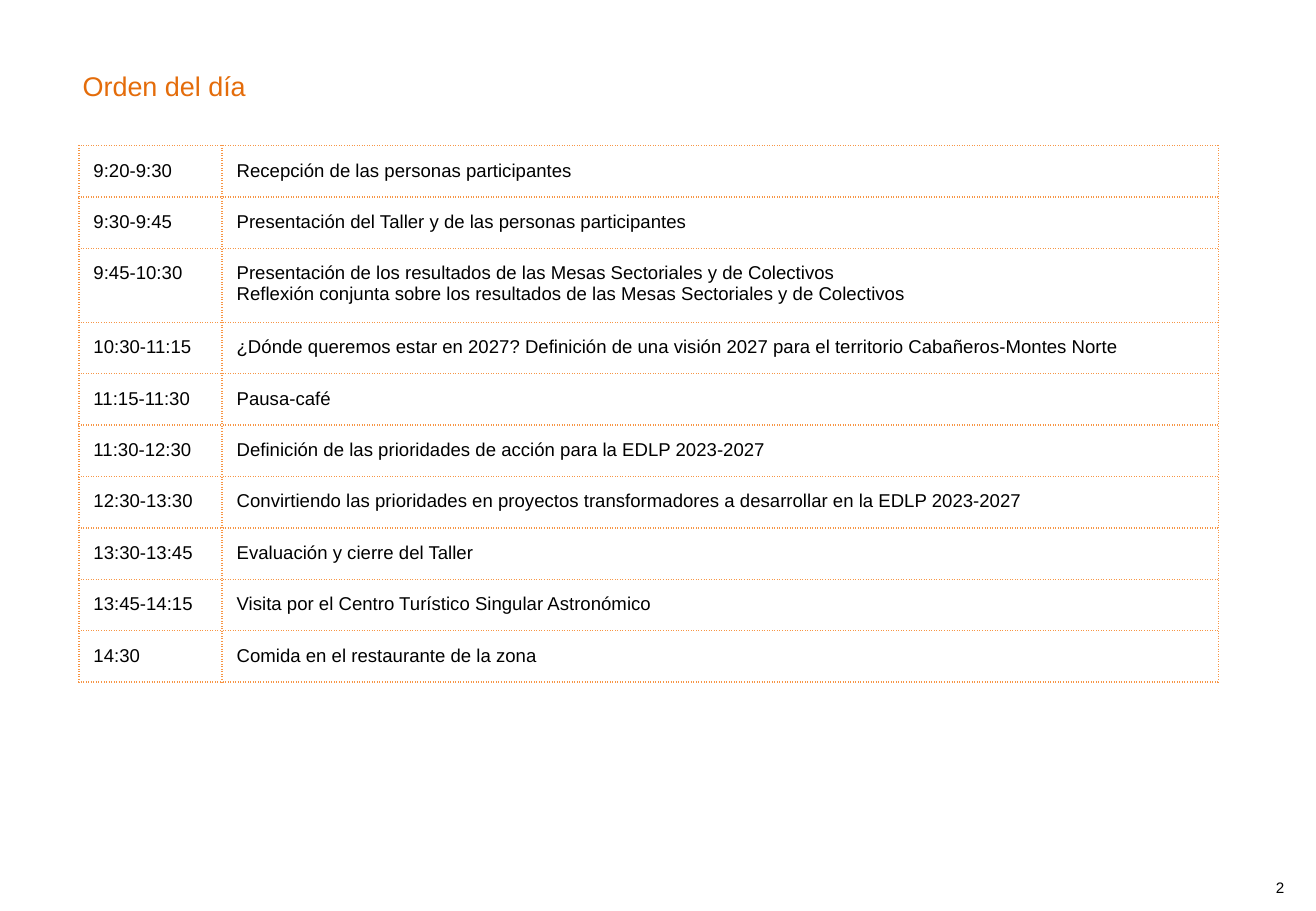
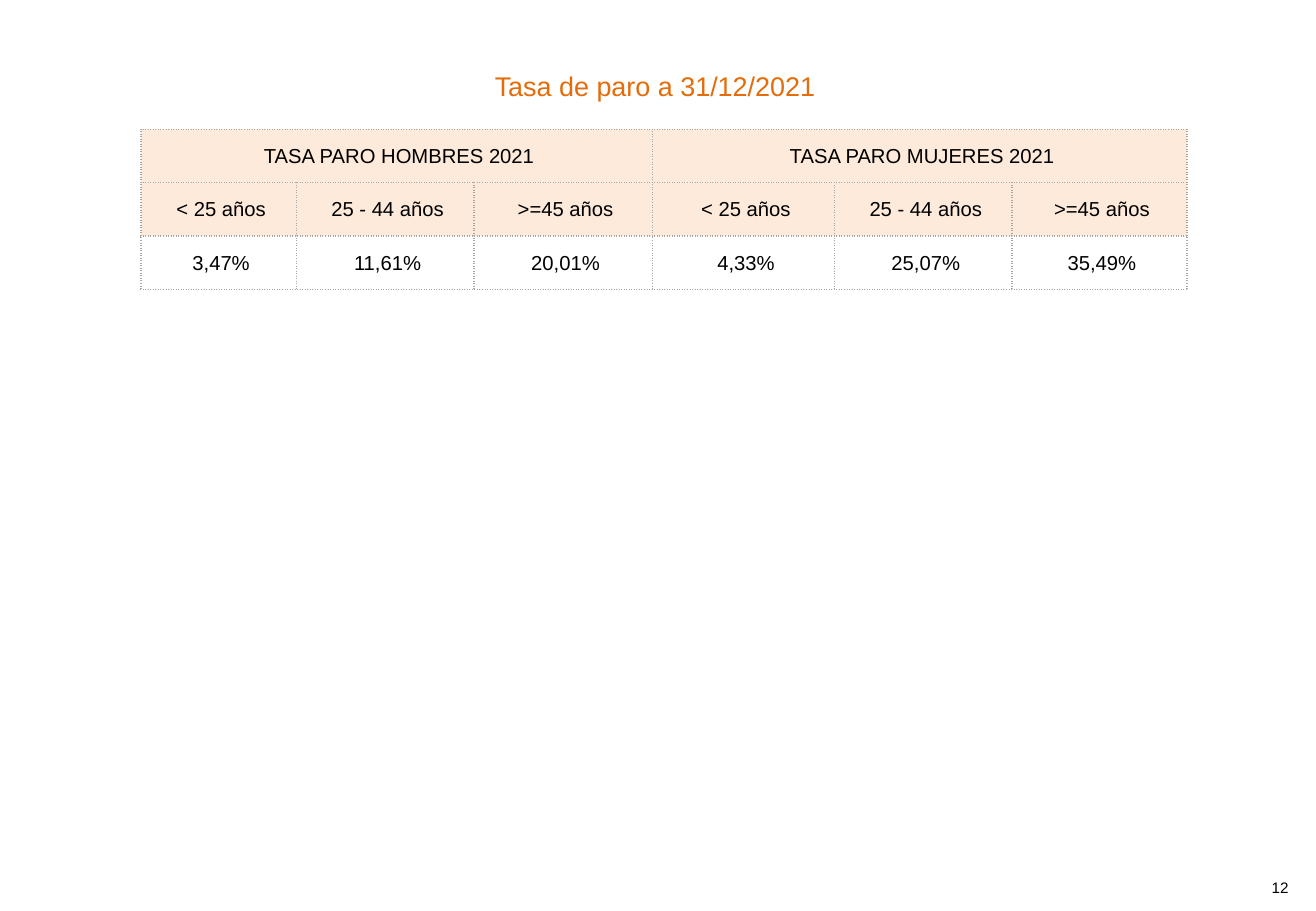
from lxml import etree
from pptx import Presentation
from pptx.dml.color import RGBColor
from pptx.enum.text import MSO_ANCHOR, MSO_AUTO_SIZE, PP_ALIGN
from pptx.oxml.ns import qn
from pptx.util import Inches, Pt

LEFT, CENTER, JUSTIFY = PP_ALIGN.LEFT, PP_ALIGN.CENTER, PP_ALIGN.JUSTIFY
TOP, MIDDLE = MSO_ANCHOR.TOP, MSO_ANCHOR.MIDDLE
FIT_SHAPE = MSO_AUTO_SIZE.SHAPE_TO_FIT_TEXT

SLIDE_W, SLIDE_H = Inches(10.83), Inches(7.5)
FONT = "Arial"
BLACK, WHITE, TITLE_ORANGE = "000000", "FFFFFF", "E46C0A"
LINE_ORANGE, LINE_GREY, PEACH = "F79646", "A6A6A6", "FDEADA"

TITLE_BOX = (5.36, 7.0, 88.83, 4.93)
NUMBER_BOX = (95.11, 96.13, 4.34, 2.53)
AGENDA_BOX = (6, 16, 86.61, 57.9)
RATES_BOX = (10.71, 14.2, 79.5, 17.47)

AGENDA = [
    ("9:20-9:30", "Recepción de las personas participantes"),
    ("9:30-9:45", "Presentación del Taller y de las personas participantes"),
    ("9:45-10:30", "Presentación de los resultados de las Mesas Sectoriales y de Colectivos\n"
     "Reflexión conjunta sobre los resultados de las Mesas Sectoriales y de Colectivos"),
    ("10:30-11:15", "¿Dónde queremos estar en 2027? Definición de una visión 2027 "
     "para el territorio Cabañeros-Montes Norte"),
    ("11:15-11:30", "Pausa-café"),
    ("11:30-12:30", "Definición de las prioridades de acción para la EDLP 2023-2027"),
    ("12:30-13:30", "Convirtiendo las prioridades en proyectos transformadores "
     "a desarrollar en la EDLP 2023-2027"),
    ("13:30-13:45", "Evaluación y cierre del Taller"),
    ("13:45-14:15", "Visita por el Centro Turístico Singular Astronómico"),
    ("14:30", "Comida en el restaurante de la zona"),
]
AGES = ("< 25 años", "25 - 44 años", ">=45 años")
RATES = [
    ("TASA PARO HOMBRES 2021", "", "", "TASA PARO MUJERES 2021", "", ""),
    AGES * 2,
    ("3,47%", "11,61%", "20,01%", "4,33%", "25,07%", "35,49%"),
]


def rgb(value):
    """Turn a hex string into a colour."""
    return RGBColor.from_string(value)


def place(box):
    """Convert left, top, width and height in percent of the slide to lengths."""
    sides = (SLIDE_W, SLIDE_H, SLIDE_W, SLIDE_H)
    return [int(side * share / 100) for side, share in zip(sides, box)]


def write(frame, text, size, color, align):
    """Write text into a frame in one uniform style."""
    frame.text = text
    for paragraph in frame.paragraphs:
        paragraph.alignment = align
        for run in paragraph.runs:
            run.font.name, run.font.size = FONT, Pt(size)
            run.font.color.rgb = rgb(color)


def set_borders(cell, color, dash):
    """Draw a dotted line of one point on all four sides of a cell."""
    properties = cell._tc.get_or_add_tcPr()
    for index, side in enumerate(("lnL", "lnR", "lnT", "lnB")):
        line = etree.Element(qn("a:" + side), w=str(Pt(1)))
        fill = etree.SubElement(line, qn("a:solidFill"))
        etree.SubElement(fill, qn("a:srgbClr"), val=color)
        etree.SubElement(line, qn("a:prstDash"), val=dash)
        properties.insert(index, line)


def add_grid(slide, box, texts, col_weights, row_weights, size, align, anchor,
             right_inset, line, header_rows=0):
    """Add a dotted table whose columns and rows share the box by weight."""
    left, top, width, height = place(box)
    table = slide.shapes.add_table(len(texts), len(col_weights),
                                   left, top, width, height).table
    table.first_row = table.horz_banding = False
    for column, weight in zip(table.columns, col_weights):
        column.width = int(width * weight / sum(col_weights))
    for row, weight in zip(table.rows, row_weights):
        row.height = int(height * weight / sum(row_weights))
    for row_index, row_texts in enumerate(texts):
        for col_index, text in enumerate(row_texts):
            cell = table.cell(row_index, col_index)
            write(cell.text_frame, text, size, BLACK, align)
            cell.vertical_anchor = anchor
            cell.margin_left = cell.margin_top = cell.margin_bottom = Inches(0.12)
            cell.margin_right = Inches(right_inset)
            if row_index < header_rows:
                cell.fill.solid()
                cell.fill.fore_color.rgb = rgb(PEACH)
            else:
                cell.fill.background()
            set_borders(cell, *line)
    return table


def add_page(prs, heading, align, number):
    """Add a slide with its heading and page number."""
    slide = prs.slides.add_slide(prs.slide_layouts[5])
    slide.background.fill.solid()
    slide.background.fill.fore_color.rgb = rgb(WHITE)
    title = slide.shapes.title
    title.left, title.top, title.width, title.height = place(TITLE_BOX)
    title.text_frame.vertical_anchor = TOP
    title.text_frame.auto_size = FIT_SHAPE
    write(title.text_frame, heading, 16, TITLE_ORANGE, align)
    frame = slide.shapes.add_textbox(*place(NUMBER_BOX)).text_frame
    frame.word_wrap = True
    frame.vertical_anchor = MIDDLE
    frame.margin_left = frame.margin_right = frame.margin_top = frame.margin_bottom = 0
    write(frame, str(number), 9, BLACK, CENTER)
    return slide


def build_agenda(prs):
    """Build the slide with the timetable of the workshop."""
    slide = add_page(prs, "Orden del día", JUSTIFY, 2)
    row_weights = [10 if "\n" in topic else 7 for _, topic in AGENDA]
    add_grid(slide, AGENDA_BOX, AGENDA, (1.18, 8.21), row_weights, 11, LEFT, TOP,
             0.12, (LINE_ORANGE, "dot"))


def build_rates(prs):
    """Build the slide with unemployment rates by sex and age."""
    slide = add_page(prs, "Tasa de paro a 31/12/2021", CENTER, 12)
    table = add_grid(slide, RATES_BOX, RATES, (1.28, 1.46, 1.47, 1.5, 1.46, 1.44),
                     (1, 1, 1), 12, CENTER, MIDDLE, 0.08, (LINE_GREY, "sysDot"), 2)
    for first in (0, len(AGES)):
        table.cell(0, first).merge(table.cell(0, first + len(AGES) - 1))


def main():
    """Build and save the presentation."""
    prs = Presentation()
    prs.slide_width, prs.slide_height = SLIDE_W, SLIDE_H
    build_agenda(prs)
    build_rates(prs)
    prs.save("out.pptx")


if __name__ == "__main__":
    main()
